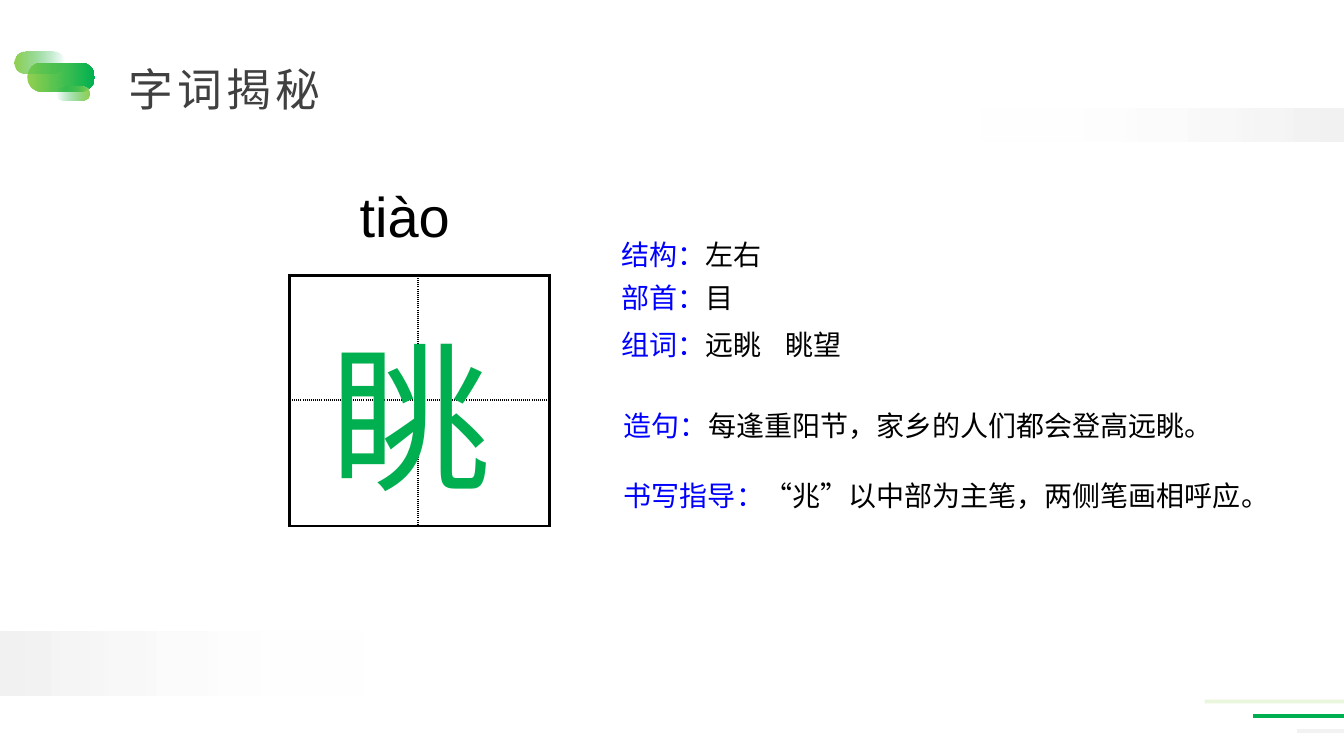
from lxml import etree
from pptx import Presentation
from pptx import util as u
from pptx.dml.color import RGBColor
from pptx.enum import dml, lang, shapes, text
from pptx.oxml import ns

GREEN, LIME, BLUE, BLACK = "00B050", "92D050", "0000FF", "000000"
GREY, WHITE, DARK = "F2F2F2", "FFFFFF", "404040"


def rgb(colour):
    return RGBColor.from_string(colour)


def add_tag(parent, tag, **attributes):
    return etree.SubElement(parent, ns.qn(tag), attributes)


class CardSlide:
    """Places elements in percentages of the slide's width and height."""

    font = "Arial"

    def __init__(self, presentation):
        self.width = presentation.slide_width
        self.height = presentation.slide_height
        self.slide = presentation.slides.add_slide(presentation.slide_layouts[5])

    def x(self, share):
        return u.Emu(round(self.width * share / 100))

    def y(self, share):
        return u.Emu(round(self.height * share / 100))

    def box(self, left, top, width, height):
        return self.x(left), self.y(top), self.x(width), self.y(height)

    def add_run(self, paragraph, words, size, colour, font=None):
        run = paragraph.add_run()
        run.text = words
        run.font.size = u.Pt(size)
        run.font.name = font or self.font
        run.font.color.rgb = rgb(colour)
        run.font.language_id = lang.MSO_LANGUAGE_ID.SIMPLIFIED_CHINESE
        return run

    def title(self, words, area):
        shape = self.slide.shapes.title
        shape.left, shape.top, shape.width, shape.height = self.box(*area)
        frame = shape.text_frame
        frame.auto_size = text.MSO_AUTO_SIZE.NONE
        frame.vertical_anchor = text.MSO_ANCHOR.TOP
        paragraph = frame.paragraphs[0]
        paragraph.alignment = text.PP_ALIGN.LEFT
        paragraph.line_spacing = 1.5
        run = self.add_run(paragraph, words, 32, DARK, "Lato")
        run.font._element.set("spc", "300")

    def label(self, runs, area, size, wrap=True, fill=None, tab=None):
        shape = self.slide.shapes.add_textbox(*self.box(*area))
        if fill:
            shape.fill.solid()
            shape.fill.fore_color.rgb = rgb(fill)
        frame = shape.text_frame
        frame.word_wrap = wrap
        frame.auto_size = text.MSO_AUTO_SIZE.SHAPE_TO_FIT_TEXT
        paragraph = frame.paragraphs[0]
        if tab:
            stops = add_tag(paragraph._p.get_or_add_pPr(), "a:tabLst")
            add_tag(stops, "a:tab", pos=str(self.x(tab)), algn="l")
        for words, colour in runs:
            self.add_run(paragraph, words, size, colour)

    def gradient(self, kind, area, start, end, fade=True, flip=False):
        shape = self.slide.shapes.add_shape(kind, *self.box(*area))
        shape.shadow.inherit = False
        shape.line.fill.background()
        if kind == shapes.MSO_SHAPE.ROUNDED_RECTANGLE:
            shape.adjustments[0] = 0.5
        shape.fill.gradient()
        shape.fill.gradient_angle = 0
        for stop, colour, position in zip(shape.fill.gradient_stops, (start, end), (0, 1)):
            stop.color.rgb = rgb(colour)
            stop.position = position
        if fade:
            last = shape._element.findall(".//" + ns.qn("a:srgbClr"))[-1]
            add_tag(last, "a:alpha", val="0")
        if flip:
            shape._element.spPr.find(ns.qn("a:xfrm")).set("flipH", "1")

    def edge_line(self, left, top, colour, opacity=100):
        """A rule that runs to the right edge of the slide."""
        line = self.slide.shapes.add_connector(
            shapes.MSO_CONNECTOR.STRAIGHT,
            self.x(left), self.y(top), self.x(100), self.y(top))
        line.line.width = u.Pt(2.75)
        line.line.color.rgb = rgb(colour)
        line.line.dash_style = dml.MSO_LINE.SOLID
        if opacity < 100:
            paint = line._element.spPr.find(".//" + ns.qn("a:srgbClr"))
            add_tag(paint, "a:alpha", val=str(opacity * 1000))
        add_tag(line._element.spPr, "a:effectLst")

    def writing_grid(self, left, top, columns, rows):
        """A square with solid outer and dotted inner borders."""
        area = self.box(left, top, sum(columns), sum(rows))
        table = self.slide.shapes.add_table(len(rows), len(columns), *area).table
        table.first_row = table.horz_banding = False
        for column, width in zip(table.columns, columns):
            column.width = self.x(width)
        for row, height in zip(table.rows, rows):
            row.height = self.y(height)
        for r in range(len(rows)):
            for c in range(len(columns)):
                cell = table.cell(r, c)
                outer = {"L": c == 0, "R": c == len(columns) - 1,
                         "T": r == 0, "B": r == len(rows) - 1}
                for side, solid in outer.items():
                    self.border(cell, side, solid)
                cell.fill.background()

    def border(self, cell, side, solid):
        width = u.Pt(2.25 if solid else 1.5)
        line = add_tag(cell._tc.get_or_add_tcPr(), "a:ln" + side, w=str(width))
        add_tag(add_tag(line, "a:solidFill"), "a:srgbClr", val=BLACK)
        add_tag(line, "a:prstDash", val="solid" if solid else "sysDot")


def main():
    presentation = Presentation()
    presentation.slide_width = u.Inches(13.33)
    presentation.slide_height = u.Inches(7.5)
    card = CardSlide(presentation)

    # Rules in the lower right corner
    card.edge_line(89.63, 92.8, LIME, opacity=20)
    card.edge_line(93.22, 94.67, GREEN)
    card.edge_line(96.53, 96.67, GREY)

    # Green pills beside the title
    pill = shapes.MSO_SHAPE.ROUNDED_RECTANGLE
    card.gradient(pill, (2.03, 8.27, 5.03, 3.87), LIME, GREEN, fade=False)
    card.gradient(pill, (1.05, 6.8, 3.75, 2.93), LIME, GREEN)
    card.gradient(pill, (4.2, 11.47, 2.48, 1.87), LIME, GREEN, flip=True)

    # Fading grey bands
    band = shapes.MSO_SHAPE.RECTANGLE
    card.gradient(band, (0, 83.6, 27.15, 8.4), GREY, WHITE)
    card.gradient(band, (72.85, 14.4, 27.15, 4.27), GREY, WHITE, flip=True)

    card.title("字词揭秘", (8.78, 4, 20.85, 11.2))

    # Facts about the character: heading, content, left, top, width, options
    facts = [
        ("书写指导：", "“兆”以中部为主笔，两侧笔画相呼应。", 45.68, 62.67, 48.83, {}),
        ("结构：", "左右", 45.52, 30.8, 19.2, {"fill": WHITE}),
        ("组词：", "远眺\t眺望", 45.52, 42.67, 33.38, {"tab": 12.2}),
        ("造句：", "每逢重阳节，家乡的人们都会登高远眺。", 45.68, 53.33, 54.32, {}),
        ("部首：", "目", 45.52, 36.4, 23.85, {}),
    ]
    for heading, content, left, top, width, options in facts:
        card.label([(heading, BLUE), (content, BLACK)],
                   (left, top, width, 5.87), 20, **options)

    # Character in its writing grid, with the reading above
    card.writing_grid(21.52, 36.4, (9.6, 9.75), (16.53, 16.67))
    card.label([("眺", GREEN)], (23.85, 41.33, 13.58, 27.2), 115, wrap=False)
    card.label([("tiào", BLACK)], (26.02, 23.33, 8.33, 10.27), 40, wrap=False)

    presentation.save("out.pptx")


if __name__ == "__main__":
    main()
